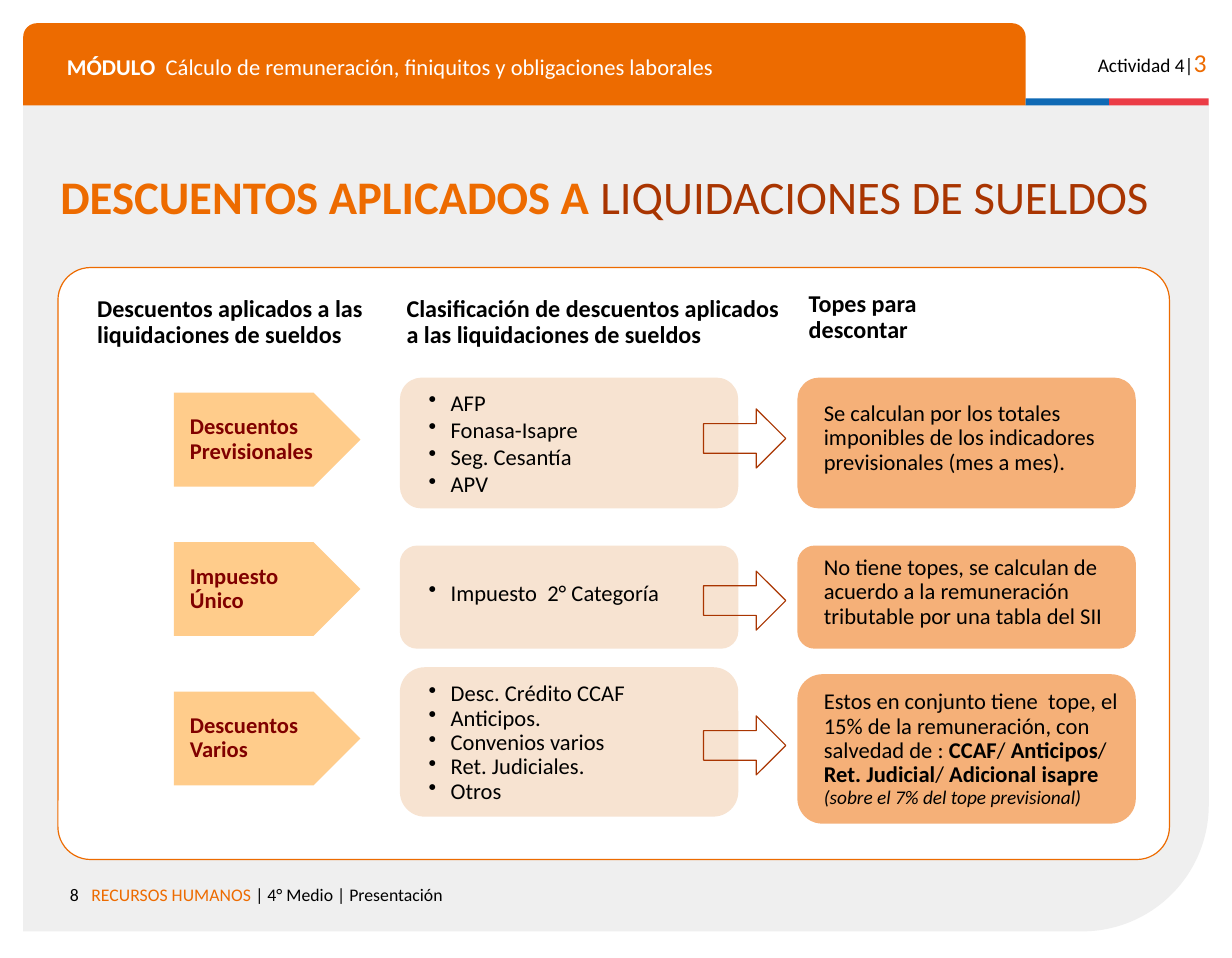
from dataclasses import dataclass
from lxml import etree
from pptx import Presentation
from pptx import util as u
from pptx.dml import color
from pptx.enum import shapes, text
from pptx.oxml import ns


@dataclass(frozen=True)
class Theme:
    font: str = "Calibri"
    orange: str = "ED6B00"
    rust: str = "A93501"
    maroon: str = "800000"
    black: str = "000000"
    white: str = "FFFFFF"
    grey: str = "EFEFEF"
    blue: str = "0F69B4"
    red: str = "EB3C46"
    peach: str = "FFCC8B"
    cream: str = "F7E3D1"
    title: int = 29
    number: int = 16
    heading: int = 15
    body: int = 14
    small: int = 12
    footer: int = 11


theme = Theme()
kinds = shapes.MSO_SHAPE
deck = Presentation()
deck.slide_width, deck.slide_height = u.Inches(10.63), u.Inches(8.27)
page = deck.slides.add_slide(deck.slide_layouts[5])


def draw(kind, area, fill=None, line=None, adjust=(), alpha=None):
    shape = page.shapes.add_shape(kind, *map(u.Inches, area))
    shape.shadow.inherit = False
    for index, value in enumerate(adjust):
        shape.adjustments[index] = value
    if fill:
        shape.fill.solid()
        shape.fill.fore_color.rgb = color.RGBColor.from_string(fill)
    else:
        shape.fill.background()
    if line:
        shape.line.color.rgb = color.RGBColor.from_string(line)
        shape.line.width = u.Pt(0.75)
    else:
        shape.line.fill.background()
    if alpha:
        tint = shape.fill._xPr.find(".//" + ns.qn("a:srgbClr"))
        etree.SubElement(tint, ns.qn("a:alpha")).set("val", str(alpha * 1000))
    return shape


def write(box, lines, size=theme.body, tint=theme.black, bold=False, spacing=0.9,
          align=text.PP_ALIGN.LEFT, anchor=text.MSO_ANCHOR.TOP, pad=0.05, bullet=False, indent=0):
    if isinstance(box, tuple):
        box = page.shapes.add_textbox(*map(u.Inches, box))
    frame = box.text_frame
    frame.word_wrap, frame.auto_size = True, text.MSO_AUTO_SIZE.NONE
    frame.vertical_anchor = anchor
    frame.margin_left = frame.margin_right = u.Inches(0.1)
    frame.margin_top = frame.margin_bottom = u.Inches(pad)
    for index, line in enumerate(lines):
        para = frame.add_paragraph() if index else frame.paragraphs[0]
        props = para._p.get_or_add_pPr()
        if indent:
            props.set("marL", str(u.Inches(indent)))
        if bullet:
            props.set("indent", str(-u.Inches(indent)))
            etree.SubElement(props, ns.qn("a:buChar")).set("char", "•")
        para.alignment, para.line_spacing = align, spacing
        para.space_before = u.Pt(0)
        for words, style in [(line, {})] if isinstance(line, str) else line:
            span = para.add_run()
            span.text = words
            font = span.font
            font.name = theme.font
            font.size = u.Pt(style.get("size", size))
            font.bold = style.get("bold", bold)
            font.italic = style.get("italic", False)
            font.color.rgb = color.RGBColor.from_string(style.get("tint", tint))


backdrop = draw(kinds.ROUND_1_RECTANGLE, (0.2, 0.9, 10.23, 7.14), theme.grey, adjust=[0.153])
backdrop.rotation = 180
backdrop.element.spPr.find(ns.qn("a:xfrm")).set("flipH", "1")
draw(kinds.ROUND_2_SAME_RECTANGLE, (0.2, 0.2, 8.65, 0.71), theme.orange, adjust=[0.167, 0])
draw(kinds.RECTANGLE, (8.85, 0.85, 0.72, 0.06), theme.blue)
draw(kinds.RECTANGLE, (9.57, 0.85, 0.86, 0.06), theme.red)

write((0.48, 0.38, 8.14, 0.35),
      [[("MÓDULO  ", {"bold": True}),
        ("Cálculo de remuneración, finiquitos y obligaciones laborales", {})]],
      tint=theme.white, pad=0.1)
write((9.23, 0.3, 1.28, 0.38),
      [[("Actividad 4|", {}), ("3", {"size": theme.number, "tint": theme.orange})]],
      size=theme.small, spacing=1, align=text.PP_ALIGN.RIGHT, pad=0.1)
write((0.2, 7.53, 0.58, 0.29), ["8"], size=theme.footer, spacing=1,
      align=text.PP_ALIGN.RIGHT, pad=0.1)
write((0.69, 7.53, 7.14, 0.38),
      [[("RECURSOS HUMANOS ", {"tint": theme.orange}), ("| 4° Medio | Presentación", {})]],
      size=theme.footer, spacing=1, pad=0.1)

title = page.shapes.title
title.left, title.top, title.width, title.height = map(u.Inches, (0.42, 1.4, 10.21, 0.59))
title.element.getparent().append(title.element)
write(title, [[("DESCUENTOS APLICADOS A ", {"bold": True}),
               ("LIQUIDACIONES DE SUELDOS", {"tint": theme.rust})]],
      size=theme.title, tint=theme.orange, spacing=1)

draw(kinds.ROUNDED_RECTANGLE, (0.5, 2.31, 9.59, 5.11), theme.white, theme.orange, [0.055])

headings = [
    (0.74, 2.51, 2.7, ["Descuentos aplicados a las", "liquidaciones de sueldos"]),
    (3.41, 2.51, 3.5, ["Clasificación de descuentos aplicados", "a las liquidaciones de sueldos"]),
    (6.88, 2.47, 2.9, ["Topes para", "descontar"]),
]
for left, top, width, lines in headings:
    write((left, top, width, 0.56), lines, size=theme.heading, bold=True)

strong = {"bold": True}
discounts = [
    dict(label=["Descuentos Previsionales"],
         items=["AFP", "Fonasa-Isapre", "Seg. Cesantía", "APV"], spacing=1,
         limit=["Se calculan por los totales imponibles de los indicadores previsionales (mes a mes)."],
         card=3.26, limit_card=3.26, height=1.13, list_top=3.31, limit_top=3.42, arrow=3.53),
    dict(label=["Impuesto", "Único"], items=["Impuesto  2° Categoría"], spacing=1,
         limit=["No tiene topes, se calculan de acuerdo a la remuneración tributable por una tabla del SII"],
         card=4.71, limit_card=4.71, height=0.89, list_top=4.95, limit_top=4.75, arrow=4.93),
    dict(label=["Descuentos", "Varios"],
         items=["Desc. Crédito CCAF", "Anticipos.", "Convenios varios", "Ret. Judiciales.", "Otros"],
         spacing=0.9,
         limit=[[("Estos en conjunto tiene  tope, el 15% de la remuneración, con salvedad de : ", {}),
                 ("CCAF", strong), ("/ ", {}), ("Anticipos", strong), ("/", {})],
                [("Ret. Judicial", strong), ("/ ", {}), ("Adicional isapre ", strong),
                 ("(sobre el 7% del tope previsional)", {"size": theme.small, "italic": True})]],
         card=5.76, limit_card=5.82, height=1.29, list_top=5.84, limit_top=5.91, arrow=6.18),
]
for index, row in enumerate(discounts):
    height = row["height"]
    label = draw(kinds.PENTAGON, (1.5, 3.39 + 1.29 * index, 1.61, 0.81), theme.peach, adjust=[0.5])
    write(label, row["label"], tint=theme.maroon, bold=True,
          anchor=text.MSO_ANCHOR.MIDDLE, indent=0.04)
    draw(kinds.ROUNDED_RECTANGLE, (3.45, row["card"], 2.92, height), theme.cream, adjust=[0.167])
    write((3.6, row["list_top"], 2.69, height - 0.1), row["items"],
          spacing=row["spacing"], bullet=True, indent=0.19)
    draw(kinds.ROUNDED_RECTANGLE, (6.88, row["limit_card"], 2.92, height), theme.orange,
         adjust=[0.167], alpha=53)
    write((7.01, row["limit_top"], 2.8, height - 0.1), row["limit"])
    draw(kinds.RIGHT_ARROW, (6.07, row["arrow"], 0.71, 0.51), line=theme.rust, adjust=[0.5, 0.5])

deck.save("out.pptx")
